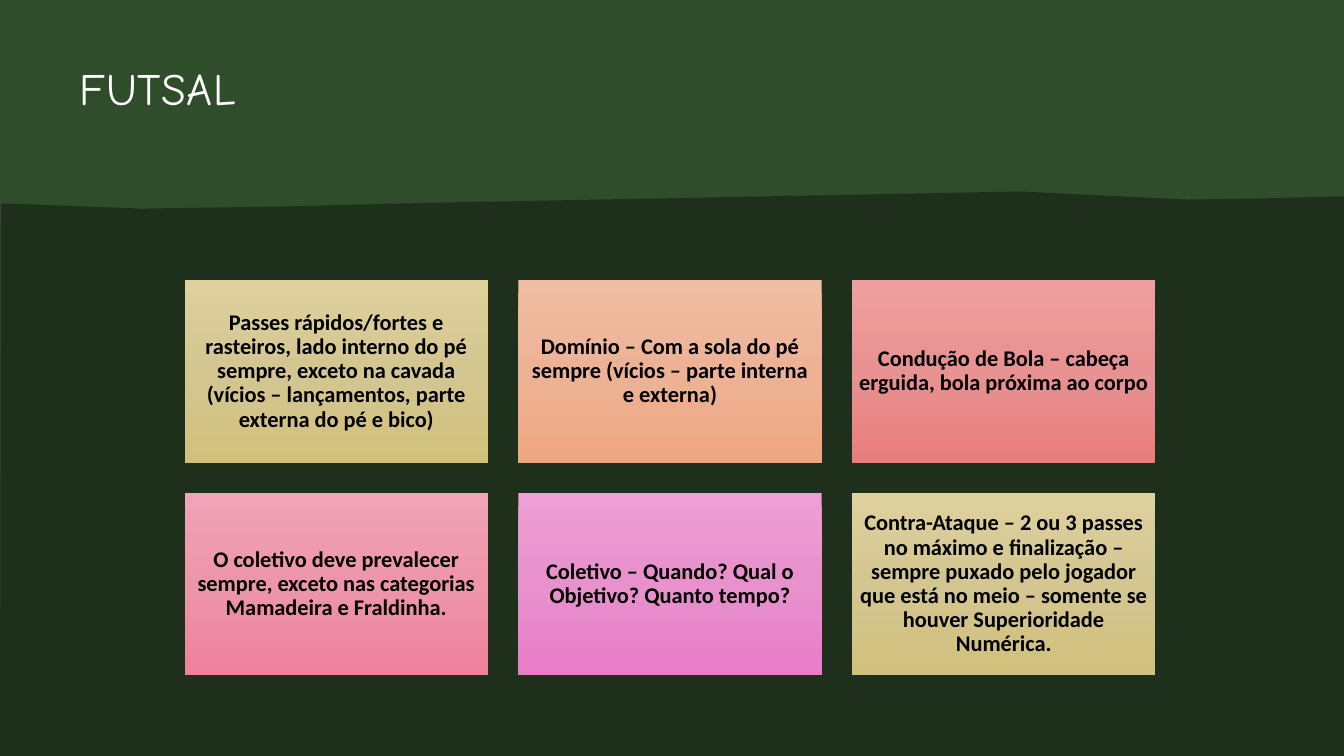
from copy import deepcopy

from pptx import Presentation
from pptx.dml.color import RGBColor
from pptx.enum.shapes import MSO_SHAPE
from pptx.enum.text import MSO_ANCHOR, MSO_AUTO_SIZE, PP_ALIGN
from pptx.oxml.ns import qn
from pptx.util import Inches, Pt

RECT = MSO_SHAPE.RECTANGLE
TOP, MIDDLE = MSO_ANCHOR.TOP, MSO_ANCHOR.MIDDLE
LEFT, CENTER = PP_ALIGN.LEFT, PP_ALIGN.CENTER
NO_FIT = MSO_AUTO_SIZE.NONE

GREEN = RGBColor(0x2F, 0x4C, 0x2B)
DARK = RGBColor(0x1E, 0x30, 0x1B)
WHITE = RGBColor(0xFF, 0xFF, 0xFF)
BLACK = RGBColor(0x00, 0x00, 0x00)
SAND = (RGBColor(0xDE, 0xD1, 0x9E), RGBColor(0xD3, 0xC6, 0x91), RGBColor(0xD1, 0xC1, 0x7C))
PEACH = (RGBColor(0xF1, 0xBD, 0xA3), RGBColor(0xED, 0xB2, 0x95), RGBColor(0xEF, 0xA7, 0x81))
CORAL = (RGBColor(0xEF, 0x9F, 0x9F), RGBColor(0xE8, 0x92, 0x91), RGBColor(0xE9, 0x7D, 0x7D))
ROSE = (RGBColor(0xF1, 0xA3, 0xB7), RGBColor(0xED, 0x95, 0xAB), RGBColor(0xEF, 0x81, 0x9E))
ORCHID = (RGBColor(0xEF, 0x9F, 0xD5), RGBColor(0xE8, 0x91, 0xCD), RGBColor(0xE9, 0x7D, 0xC8))

# Ground outline, in ten-thousandths of the slide's width and height
GROUND = [
    (7592, 2533), (8830, 2640), (9325, 2627), (9925, 2600), (10000, 2600),
    (10000, 10000), (0, 10000), (8, 2693), (60, 2693), (1050, 2760),
    (2041, 2733), (2656, 2707), (3271, 2680),
]
COLS = 3
CARDS = [
    ("Passes rápidos/fortes e rasteiros, lado interno do pé sempre, exceto na cavada "
     "(vícios – lançamentos, parte externa do pé e bico)", SAND),
    ("Domínio – Com a sola do pé sempre (vícios – parte interna e externa)", PEACH),
    ("Condução de Bola – cabeça erguida, bola próxima ao corpo", CORAL),
    ("O coletivo deve prevalecer sempre, exceto nas categorias Mamadeira e Fraldinha.", ROSE),
    ("Coletivo – Quando? Qual o Objetivo? Quanto tempo?", ORCHID),
    ("Contra-Ataque – 2 ou 3 passes no máximo e finalização – sempre puxado pelo jogador "
     "que está no meio – somente se houver Superioridade Numérica.", SAND),
]


class Board:
    """Hold the style, the card grid and the current slide."""
    head_font, body_font = "Comic Neue", "Calibri"
    head_size, body_size = Pt(32), Pt(16)
    left, top = Inches(1.83), Inches(2.78)
    card_w, card_h = Inches(3.01), Inches(1.81)
    gap = Inches(0.3)

    def __init__(self, deck):
        self.wide, self.high = deck.slide_width, deck.slide_height
        self.slide = deck.slides.add_slide(deck.slide_layouts[5])
        self.shapes = self.slide.shapes
        fill = self.slide.background.fill
        fill.solid()
        fill.fore_color.rgb = DARK

    def plain(self, shape, color):
        """Give a flat fill, with no line or shadow."""
        shape.shadow.inherit = False
        shape.line.fill.background()
        shape.fill.solid()
        shape.fill.fore_color.rgb = color

    def label(self, shape, text, font, size, color, bold, align, anchor, inset, lead):
        """Set the shape's text and return its run."""
        frame = shape.text_frame
        frame.word_wrap = True
        frame.auto_size = NO_FIT
        frame.vertical_anchor = anchor
        frame.margin_left = frame.margin_right = inset
        frame.margin_top = frame.margin_bottom = inset
        para = frame.paragraphs[0]
        para.alignment = align
        para.line_spacing = lead
        run = para.add_run()
        run.text = text
        run.font.name, run.font.size, run.font.bold = font, size, bold
        run.font.color.rgb = color
        return run

    def title(self, text):
        box = self.shapes.title
        box.left, box.top = int(self.wide * 0.0593), int(self.high * 0.09)
        box.width, box.height = int(self.wide * 0.88), int(self.high * 0.1)
        run = self.label(box, text, self.head_font, self.head_size, WHITE,
                         False, LEFT, TOP, 0, 0.88)
        run.font._element.set("spc", "40")

    def backdrop(self, color):
        """Fill the slide behind the title."""
        shape = self.shapes.add_shape(RECT, 0, 0, self.wide, self.high)
        self.plain(shape, color)
        self.shapes.title._element.addprevious(shape._element)

    def ground(self, points, color):
        scale = (self.wide / 10000, self.high / 10000)
        edge = self.shapes.build_freeform(*points[0], scale=scale)
        edge.add_line_segments(points[1:], close=True)
        self.plain(edge.convert_to_shape(), color)

    def blend(self, shape, colors):
        """Fill from top to bottom through three colours."""
        fill = shape.fill
        fill.gradient()
        fill.gradient_angle = 270
        first = shape._element.spPr.find(".//" + qn("a:gs"))
        first.addnext(deepcopy(first))
        for stop, place, color in zip(fill.gradient_stops, (0, 0.5, 1), colors):
            stop.position = place
            stop.color.rgb = color

    def card(self, col, row, text, colors):
        x = self.left + col * (self.card_w + self.gap)
        y = self.top + row * (self.card_h + self.gap)
        shape = self.shapes.add_shape(RECT, x, y, self.card_w, self.card_h)
        self.plain(shape, colors[0])
        self.blend(shape, colors)
        self.label(shape, text, self.body_font, self.body_size, BLACK,
                   True, CENTER, MIDDLE, Inches(0.07), 0.9)


def main():
    deck = Presentation()
    deck.slide_width, deck.slide_height = Inches(13.33), Inches(7.5)
    board = Board(deck)
    board.backdrop(GREEN)
    board.title("FUTSAL")
    board.ground(GROUND, DARK)
    for i, (text, colors) in enumerate(CARDS):
        row, col = divmod(i, COLS)
        board.card(col, row, text, colors)
    deck.save("out.pptx")


if __name__ == "__main__":
    main()
